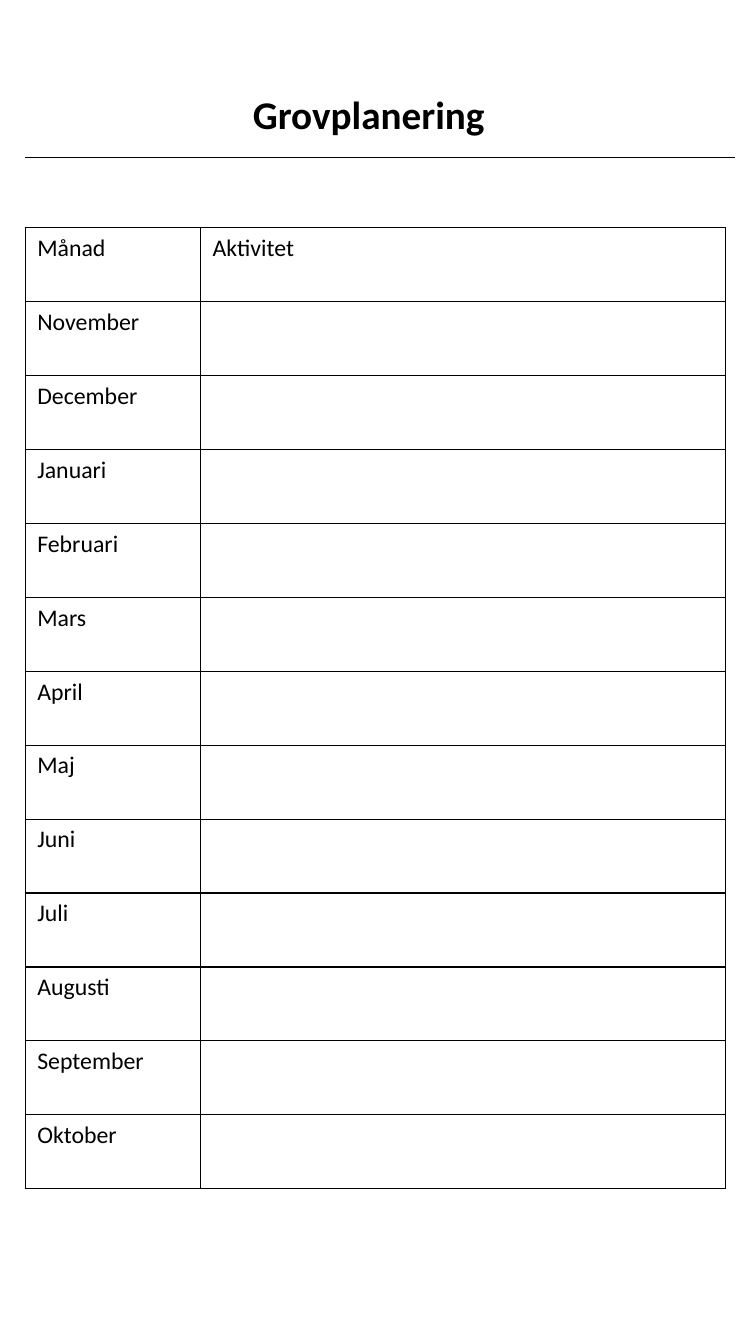
"""Build a one-page month-by-month activity planner."""
from lxml.etree import SubElement
from pptx import Presentation
from pptx.dml.color import RGBColor
from pptx.enum.shapes import MSO_CONNECTOR
from pptx.oxml import parse_xml
from pptx.oxml.ns import nsdecls, qn
from pptx.util import Inches, Pt

TITLE = "Grovplanering"
HEADINGS = ["Månad", "Aktivitet"]
MONTHS = ["November", "December", "Januari", "Februari", "Mars", "April",
          "Maj", "Juni", "Juli", "Augusti", "September", "Oktober"]
ROWS = [HEADINGS] + [[month, ""] for month in MONTHS]

PAGE_SIZE = (7.5, 13.33)
TITLE_BOX = (2.41, 0.85, 2.68, 0.57)
RULE = (0.25, 1.56, 7.29, 1.56)
TABLE_BOX = (0.25, 2.26, 6.95, 9.53)
COLUMN_WIDTHS = [1.74, 5.21]
INK = "000000"
LINE_WIDTH = Pt(1)
TITLE_FONT = {"name": "Calibri", "size": Pt(28), "bold": True}
CELL_FONT = {"name": "Calibri", "size": Pt(17), "bold": False}
CELL_MARGINS = {"margin_left": Inches(0.12), "margin_right": Inches(0.12),
                "margin_top": Inches(0.06), "margin_bottom": Inches(0.06)}


def inches(values):
    return [Inches(value) for value in values]


def paint(color_format, color):
    color_format.rgb = RGBColor.from_string(color)


def set_values(target, values):
    for name, value in values.items():
        setattr(target, name, value)


def write(para, text, font):
    span = para.add_run()
    span.text = text
    set_values(span.font, font)
    paint(span.font.color, INK)


def add_borders(cell):
    properties = cell._tc.get_or_add_tcPr()
    for index, side in enumerate("LRTB"):
        properties.insert(index, parse_xml(
            f'<a:ln{side} {nsdecls("a")} w="{LINE_WIDTH}"><a:solidFill>'
            f'<a:srgbClr val="{INK}"/></a:solidFill></a:ln{side}>'))


def add_title(page):
    box = page.shapes.add_textbox(*inches(TITLE_BOX))
    box.text_frame.word_wrap = True
    write(box.text_frame.paragraphs[0], TITLE, TITLE_FONT)


def add_rule(page):
    rule = page.shapes.add_connector(MSO_CONNECTOR.STRAIGHT, *inches(RULE))
    rule.line.width = LINE_WIDTH
    paint(rule.line.color, INK)
    SubElement(rule._element.spPr, qn("a:effectLst"))


def add_planner(page):
    frame = page.shapes.add_table(len(ROWS), len(HEADINGS), *inches(TABLE_BOX))
    table = frame.table
    set_values(table, {"first_row": False, "horz_banding": False})
    for column, width in zip(table.columns, COLUMN_WIDTHS):
        column.width = Inches(width)
    for row, texts in zip(table.rows, ROWS):
        row.height = Inches(TABLE_BOX[3] / len(ROWS))
        for cell, text in zip(row.cells, texts):
            set_values(cell, CELL_MARGINS)
            cell.fill.background()
            add_borders(cell)
            if text:
                write(cell.text_frame.paragraphs[0], text, CELL_FONT)


def main():
    deck = Presentation()
    deck.slide_width, deck.slide_height = inches(PAGE_SIZE)
    page = deck.slides.add_slide(deck.slide_layouts[6])
    add_planner(page)
    add_rule(page)
    add_title(page)
    deck.save("out.pptx")


if __name__ == "__main__":
    main()
